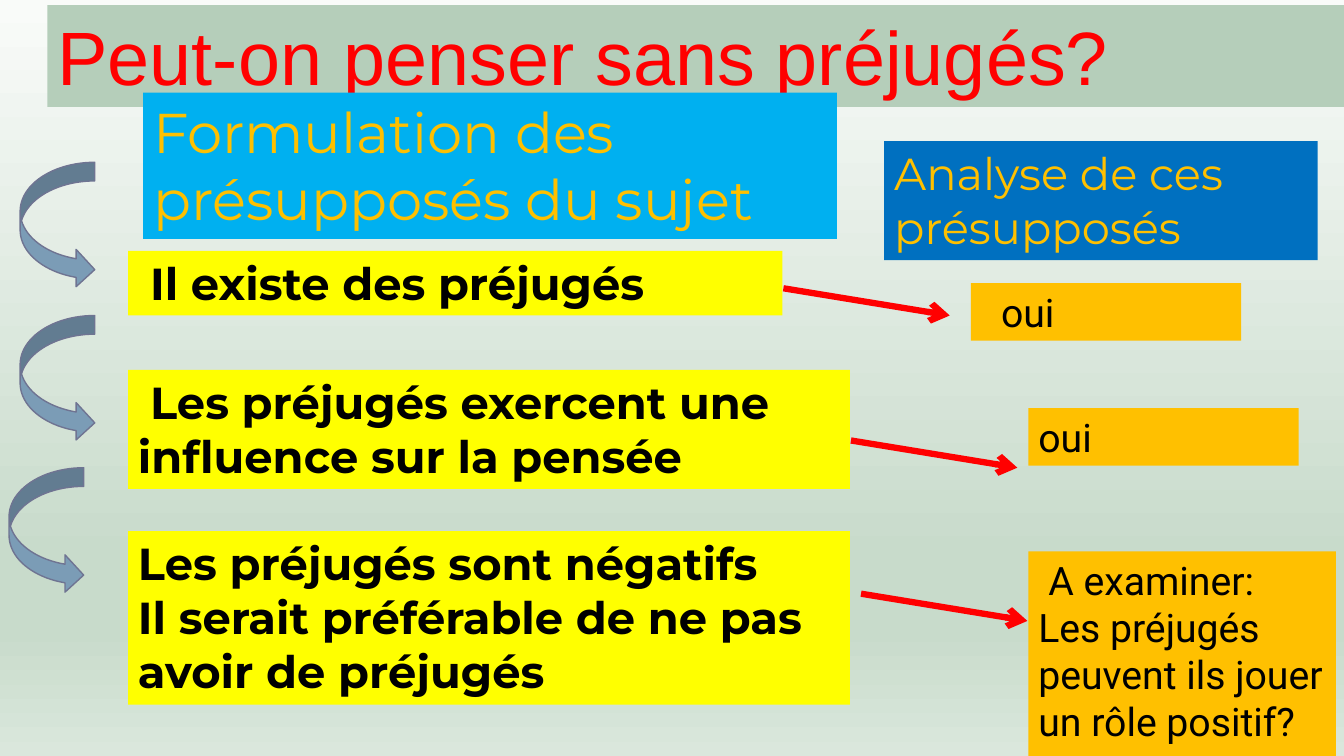
import copy

import pptx
import pptx.dml.color
import pptx.enum.shapes
import pptx.enum.text
import pptx.oxml
import pptx.oxml.ns
import pptx.util

PX = 9144  # EMU per px, 100 px to the inch
SHAPE = pptx.enum.shapes.MSO_SHAPE


def rgb(value):
    return pptx.dml.color.RGBColor.from_string(value)


def fill_box(sp, box, fill, paragraphs, size, font, color, bold=False, indent=0):
    """Place a filled text box; indent is the first line's, in px."""
    sp.left, sp.top, sp.width, sp.height = (v * PX for v in box)
    sp.fill.solid()
    sp.fill.fore_color.rgb = rgb(fill)
    tf = sp.text_frame
    tf.text = "\n".join(paragraphs)
    tf.word_wrap = True
    tf.auto_size = pptx.enum.text.MSO_AUTO_SIZE.SHAPE_TO_FIT_TEXT
    tf.vertical_anchor = pptx.enum.text.MSO_ANCHOR.TOP
    for p in tf.paragraphs:
        p.alignment = pptx.enum.text.PP_ALIGN.LEFT
        for r in p.runs:
            r.font.size = pptx.util.Pt(size)
            r.font.name = font
            r.font.bold = bold
            r.font.color.rgb = rgb(color)
    if indent:
        tf.paragraphs[0]._p.get_or_add_pPr().set("indent", str(indent * PX))


prs = pptx.Presentation()
prs.slide_width, prs.slide_height = 1333 * PX, 750 * PX
s = prs.slides.add_slide(prs.slide_layouts[5])

# Background gradient, top to bottom
fill = s.background.fill
fill.gradient()
fill.gradient_angle = 270
stops = s.element.xpath(".//a:gsLst")[0]
for gs in list(stops):
    stops.append(copy.deepcopy(gs))
shades = [(0, "F9FBF9"), (0.74, "C8DBCB"), (0.83, "C8DBCB"), (1, "DAE7DC")]
for stop, (position, color) in zip(fill.gradient_stops, shades):
    stop.position = position
    stop.color.rgb = rgb(color)

fill_box(s.shapes.title, (47, 5, 1298, 101), "B5CEBA",
         ["Peut-on penser sans préjugés?"], 54, "Arial", "FF0000")

# Column headings
headings = [
    ((142, 92, 688, 145), "00B0F0", "Formulation des présupposés du sujet", 40),
    ((877, 140, 430, 118), "0070C0", "Analyse de ces présupposés", 32),
]
for box, color, text, size in headings:
    fill_box(s.shapes.add_textbox(0, 0, 0, 0), box, color, [text],
             size, "Montserrat", "FFC000")

# Presuppositions and their analysis
presuppositions = [
    ((127, 249, 649, 64), ["Il existe des préjugés"], 12),
    ((127, 367, 716, 118),
     ["Les préjugés exercent une influence sur la pensée"], 12),
    ((127, 527, 716, 172),
     ["Les préjugés sont négatifs",
      "Il serait préférable de ne pas avoir de préjugés"], 0),
]
for box, lines, indent in presuppositions:
    fill_box(s.shapes.add_textbox(0, 0, 0, 0), box, "FFFF00", lines,
             32, "Montserrat", "000000", True, indent)

answers = [
    ((963, 281, 268, 57), ["oui"], 20),
    ((1020, 405, 268, 57), ["oui"], 0),
    ((1020, 547, 305, 246),
     ["A examiner:", "Les préjugés peuvent ils jouer un rôle positif?"], 10),
]
for box, lines, indent in answers:
    fill_box(s.shapes.add_textbox(0, 0, 0, 0), box, "FFC000", lines,
             28, "Roboto", "000000", False, indent)

# Curved arrows down the left side
for left, top in [(20, 161), (20, 313), (9, 464)]:
    sp = s.shapes.add_shape(SHAPE.CURVED_RIGHT_ARROW,
                            left * PX, top * PX, 74 * PX, 125 * PX)
    sp.shadow.inherit = False
    sp.fill.solid()
    sp.fill.fore_color.rgb = rgb("7B9CB6")
    sp.line.color.rgb = rgb("6F7492")
    sp.line.width = pptx.util.Pt(1)

# Red arrows from each presupposition to its analysis
for x, y in [(777, 286), (844, 437), (854, 589)]:
    arrow = s.shapes.add_connector(pptx.enum.shapes.MSO_CONNECTOR.STRAIGHT,
                                   x * PX, y * PX, (x + 165) * PX, (y + 27) * PX)
    arrow.line.color.rgb = rgb("FF0000")
    arrow.line.width = pptx.util.Pt(4.5)
    tail = pptx.oxml.parse_xml(
        f'<a:tailEnd {pptx.oxml.ns.nsdecls("a")} type="arrow"/>')
    arrow.line._get_or_add_ln().append(tail)
    arrow.element.spPr.append(
        pptx.oxml.parse_xml(f'<a:effectLst {pptx.oxml.ns.nsdecls("a")}/>'))

prs.save("out.pptx")
